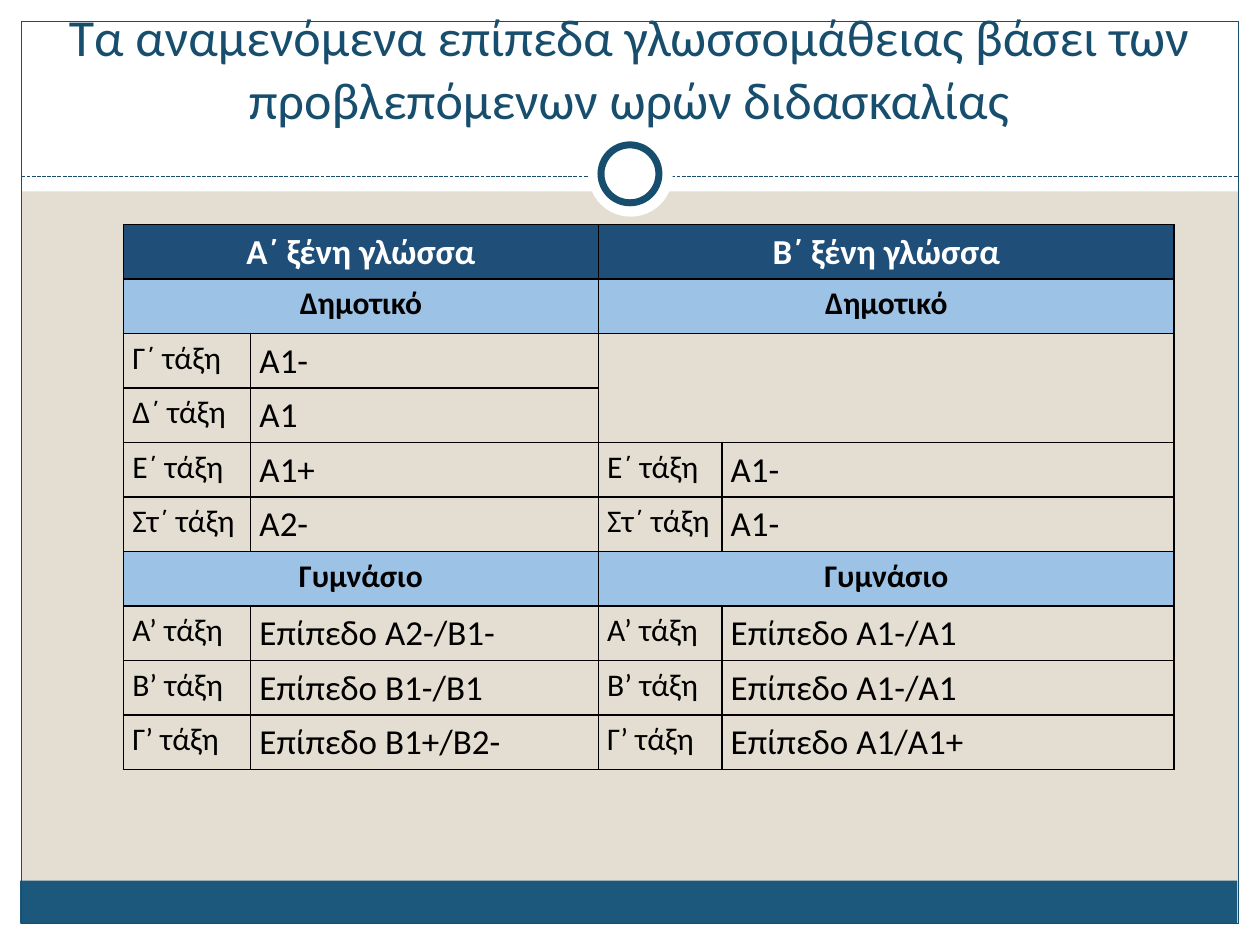
from lxml.etree import SubElement
from pptx import Presentation
from pptx.dml.color import RGBColor
from pptx.enum.dml import MSO_LINE
from pptx.enum.shapes import MSO_CONNECTOR, MSO_SHAPE
from pptx.enum.text import MSO_ANCHOR, PP_ALIGN
from pptx.oxml.ns import qn
from pptx.util import Inches, Pt

WHITE = RGBColor(0xFF, 0xFF, 0xFF)
BLACK = RGBColor(0x00, 0x00, 0x00)
SAND = RGBColor(0xE3, 0xDE, 0xD1)
TEAL = RGBColor(0x1B, 0x58, 0x7C)
DARK_TEAL = RGBColor(0x18, 0x4E, 0x6D)
NAVY = RGBColor(0x1F, 0x4E, 0x79)
LIGHT_BLUE = RGBColor(0x9C, 0xC2, 0xE5)

COLUMN_WIDTHS = [1.01, 2.76, 0.98, 3.59]
TABLE_HEIGHT = 4.33
LEVEL_ROWS = [
    ["Α΄ ξένη γλώσσα", None, "Β΄ ξένη γλώσσα", None],
    ["Δημοτικό", None, "Δημοτικό", None],
    ["Γ΄ τάξη", "A1-", None, None],
    ["Δ΄ τάξη", "A1", None, None],
    ["Ε΄ τάξη", "A1+", "Ε΄ τάξη", "A1-"],
    ["Στ΄ τάξη", "A2-", "Στ΄ τάξη", "A1-"],
    ["Γυμνάσιο", None, "Γυμνάσιο", None],
    ["Α’ τάξη", "Επίπεδο Α2-/B1-", "Α’ τάξη", "Επίπεδο Α1-/A1"],
    ["Β’ τάξη", "Επίπεδο Β1-/Β1", "Β’ τάξη", "Επίπεδο Α1-/A1"],
    ["Γ’ τάξη", "Επίπεδο Β1+/Β2-", "Γ’ τάξη", "Επίπεδο A1/Α1+"],
]
BAND_FILLS = {0: NAVY, 1: LIGHT_BLUE, 6: LIGHT_BLUE}


class SlideBuilder:
    font_name = "Calibri"

    def __init__(self, slide):
        self.slide = slide
        slide.background.fill.solid()
        slide.background.fill.fore_color.rgb = SAND

    def add_shape(self, kind, left, top, width, height, fill=None, line=None, line_width=0.75):
        shape = self.slide.shapes.add_shape(
            kind, Inches(left), Inches(top), Inches(width), Inches(height))
        shape.shadow.inherit = False
        if fill is None:
            shape.fill.background()
        else:
            shape.fill.solid()
            shape.fill.fore_color.rgb = fill
        if line is None:
            shape.line.fill.background()
        else:
            shape.line.color.rgb = line
            shape.line.width = Pt(line_width)

    def add_dashed_line(self, left, right, top):
        connector = self.slide.shapes.add_connector(
            MSO_CONNECTOR.STRAIGHT, Inches(left), Inches(top), Inches(right), Inches(top))
        connector.line.color.rgb = DARK_TEAL
        connector.line.width = Pt(0.75)
        connector.line.dash_style = MSO_LINE.SQUARE_DOT
        SubElement(connector._element.spPr, qn("a:effectLst"))

    def set_text(self, text_frame, text, size, color, bold=False, alignment=PP_ALIGN.LEFT, spacing=None):
        text_frame.text = text
        paragraph = text_frame.paragraphs[0]
        paragraph.alignment = alignment
        paragraph.line_spacing = spacing
        paragraph.font.name = self.font_name
        paragraph.font.size = Pt(size)
        paragraph.font.bold = bold
        paragraph.font.color.rgb = color

    def add_title(self, text, left, top, width, height):
        text_box = self.slide.shapes.add_textbox(
            Inches(left), Inches(top), Inches(width), Inches(height))
        text_frame = text_box.text_frame
        text_frame.word_wrap = True
        text_frame.vertical_anchor = MSO_ANCHOR.BOTTOM
        self.set_text(text_frame, text, 29.7, DARK_TEAL, alignment=PP_ALIGN.CENTER)

    def style_cell(self, cell, fill):
        properties = cell._tc.get_or_add_tcPr()
        for side in ("lnL", "lnR", "lnT", "lnB"):
            border = SubElement(properties, qn(f"a:{side}"), w=str(Pt(1)))
            solid_fill = SubElement(border, qn("a:solidFill"))
            SubElement(solid_fill, qn("a:srgbClr"), val=str(BLACK))
        if fill is None:
            cell.fill.background()
        else:
            cell.fill.solid()
            cell.fill.fore_color.rgb = fill
        cell.margin_left = cell.margin_right = Inches(0.07)
        cell.margin_top = cell.margin_bottom = 0

    def add_level_table(self, left, top):
        table = self.slide.shapes.add_table(
            len(LEVEL_ROWS), len(COLUMN_WIDTHS), Inches(left), Inches(top),
            Inches(sum(COLUMN_WIDTHS)), Inches(TABLE_HEIGHT)).table
        table.first_row = table.horz_banding = False
        for column, width in zip(table.columns, COLUMN_WIDTHS):
            column.width = Inches(width)
        for row_index, texts in enumerate(LEVEL_ROWS):
            fill = BAND_FILLS.get(row_index)
            is_band = fill is not None
            for column_index, text in enumerate(texts):
                cell = table.cell(row_index, column_index)
                self.style_cell(cell, fill)
                if text is None:
                    continue
                is_large = row_index == 0 or column_index % 2 == 1
                self.set_text(
                    cell.text_frame, text, 20 if is_large else 18,
                    WHITE if row_index == 0 else BLACK, is_band,
                    PP_ALIGN.CENTER if is_band else PP_ALIGN.LEFT, 1.15)
        for row_index in BAND_FILLS:
            for column_index in (0, 2):
                table.cell(row_index, column_index).merge(table.cell(row_index, column_index + 1))
        table.cell(2, 2).merge(table.cell(3, 3))


def main():
    presentation = Presentation()
    presentation.slide_width = Inches(10)
    presentation.slide_height = Inches(7.5)
    builder = SlideBuilder(presentation.slides.add_slide(presentation.slide_layouts[6]))

    for margin in ((0, 7.33, 10, 0.17), (0, 0, 10, 1.52), (0, 0, 0.17, 7.5), (9.83, 0, 0.17, 7.5)):
        builder.add_shape(MSO_SHAPE.RECTANGLE, *margin, fill=WHITE)
    builder.add_shape(MSO_SHAPE.RECTANGLE, 0.16, 6.99, 9.66, 0.34, fill=TEAL)
    builder.add_shape(MSO_SHAPE.RECTANGLE, 0.17, 0.17, 9.66, 7.16, line=DARK_TEAL)
    builder.add_dashed_line(0.17, 9.83, 1.4)
    builder.add_shape(MSO_SHAPE.OVAL, 4.67, 1.05, 0.67, 0.67, fill=WHITE)
    builder.add_shape(MSO_SHAPE.OVAL, 4.77, 1.15, 0.46, 0.46, WHITE, DARK_TEAL, 4)
    builder.add_title(
        "Τα αναμενόμενα επίπεδα γλωσσομάθειας βάσει των προβλεπόμενων ωρών διδασκαλίας",
        0.33, 0.25, 9.33, 0.83)
    builder.add_level_table(0.98, 1.78)
    presentation.save("out.pptx")


if __name__ == "__main__":
    main()
